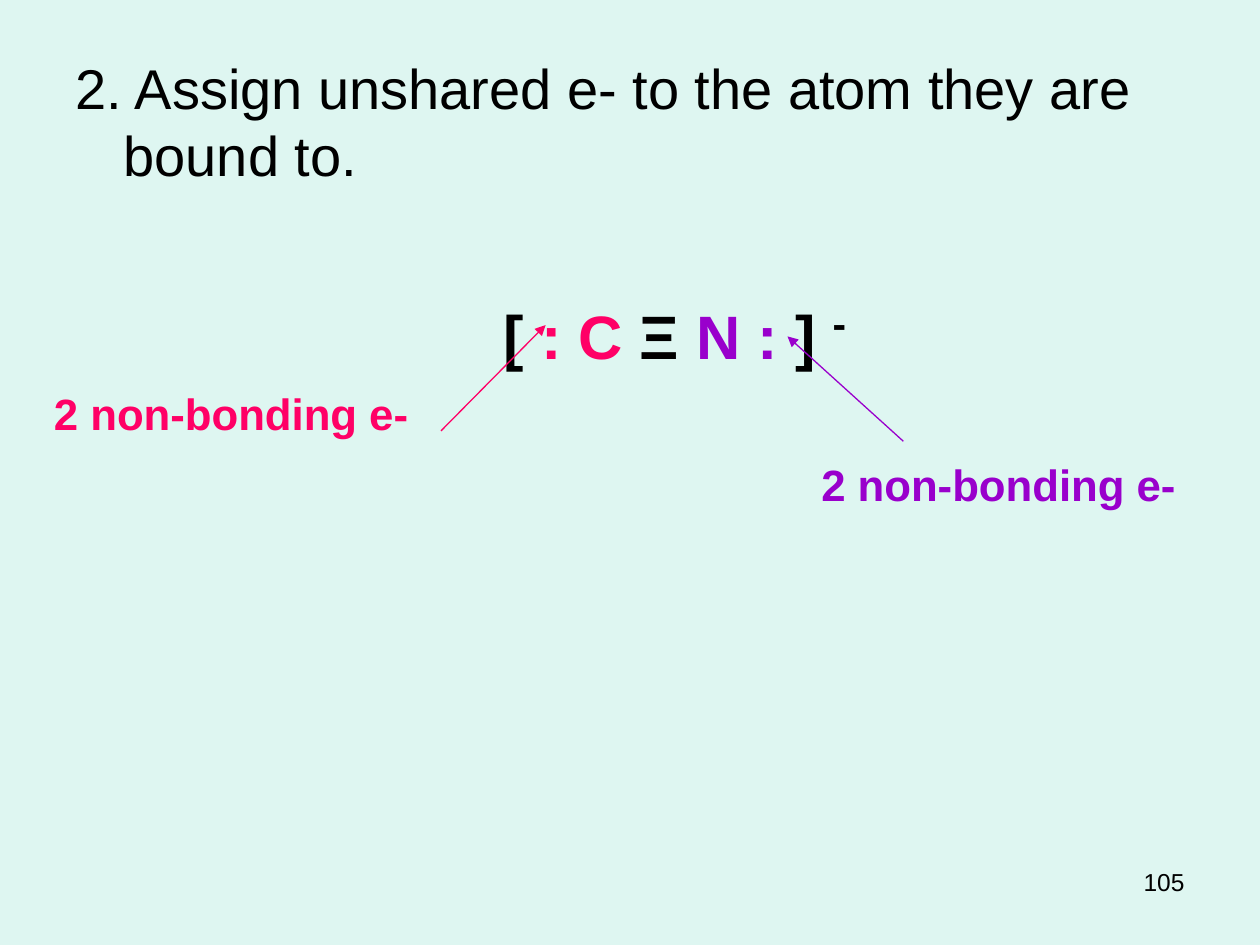
from lxml import etree
from pptx import Presentation
from pptx.dml.color import RGBColor
from pptx.enum.shapes import MSO_CONNECTOR
from pptx.enum.text import MSO_ANCHOR, MSO_AUTO_SIZE, PP_ALIGN
from pptx.oxml.ns import qn
from pptx.util import Inches, Pt

STRAIGHT = MSO_CONNECTOR.STRAIGHT
TOP = MSO_ANCHOR.TOP
NO_AUTOFIT = MSO_AUTO_SIZE.NONE
LEFT, RIGHT = PP_ALIGN.LEFT, PP_ALIGN.RIGHT

WIDTH, HEIGHT = 10, 7.5
FONT = "Arial"
COLORS = {"background": "DEF6F1", "text": "000000",
          "carbon": "FF0066", "nitrogen": "9900CC"}

HEADING = "2. Assign unshared e- to the atom they are bound to."
HEADING_BOX = (0.05, 0.05, 0.9, 0.17)
HANGING = 0.38
FORMULA = [("[ ", "text"), (": C ", "carbon"), ("Ξ ", "text"),
           ("N :", "nitrogen"), (" ] ", "text"), ("-", "text")]
FORMULA_BOX = (0.39, 0.3, 0.34, 0.1)
LABELS = [
    ("2 non-bonding e-", "carbon", (0.033, 0.403, 0.325, 0.07)),
    ("2 non-bonding e-", "nitrogen", (0.642, 0.478, 0.358, 0.07)),
]
ARROWS = [
    ("carbon", (0.35, 0.456), (0.433, 0.344)),
    ("nitrogen", (0.717, 0.467), (0.625, 0.356)),
]
PAGE_NUMBER = "105"
PAGE_BOX = (0.717, 0.911, 0.233, 0.07)


def rgb(name):
    return RGBColor.from_string(COLORS[name])


def scaled(shares):
    return [Inches(share * (HEIGHT if i % 2 else WIDTH))
            for i, share in enumerate(shares)]


def style(run, color, size, bold=False):
    run.font.name = FONT
    run.font.size = Pt(size)
    run.font.bold = bold
    run.font.color.rgb = rgb(color)


def add_text(slide, box, pieces, size, bold=False, align=LEFT):
    frame = slide.shapes.add_textbox(*scaled(box)).text_frame
    frame.word_wrap = True
    paragraph = frame.paragraphs[0]
    paragraph.alignment = align
    for text, color in pieces:
        run = paragraph.add_run()
        run.text = text
        style(run, color, size, bold)
    return paragraph


def add_heading(slide):
    heading = slide.shapes.title
    heading.left, heading.top, heading.width, heading.height = scaled(HEADING_BOX)
    frame = heading.text_frame
    frame.text = HEADING
    frame.word_wrap = True
    frame.auto_size = NO_AUTOFIT
    frame.vertical_anchor = TOP
    paragraph = frame.paragraphs[0]
    paragraph.alignment = LEFT
    properties = paragraph._p.get_or_add_pPr()
    properties.set("marL", str(Inches(HANGING)))
    properties.set("indent", str(-Inches(HANGING)))
    style(paragraph.runs[0], "text", 32)


def add_arrow(slide, color, start, end):
    arrow = slide.shapes.add_connector(STRAIGHT, *scaled(start + end))
    arrow.line.color.rgb = rgb(color)
    arrow.line.width = Pt(0.75)
    etree.SubElement(arrow.line._get_or_add_ln(), qn("a:tailEnd"), type="triangle")
    etree.SubElement(arrow._element.spPr, qn("a:effectLst"))


def main():
    deck = Presentation()
    deck.slide_width, deck.slide_height = Inches(WIDTH), Inches(HEIGHT)
    slide = deck.slides.add_slide(deck.slide_layouts[5])
    slide.background.fill.solid()
    slide.background.fill.fore_color.rgb = rgb("background")

    add_text(slide, PAGE_BOX, [(PAGE_NUMBER, "text")], 14, align=RIGHT)
    add_heading(slide)
    charge = add_text(slide, FORMULA_BOX, FORMULA, 35, bold=True).runs[-1]
    charge.font.size = Pt(40)
    charge.font._element.set("baseline", "30000")
    for arrow in ARROWS:
        add_arrow(slide, *arrow)
    for text, color, box in LABELS:
        add_text(slide, box, [(text, color)], 25, bold=True)
    deck.save("out.pptx")


if __name__ == "__main__":
    main()
